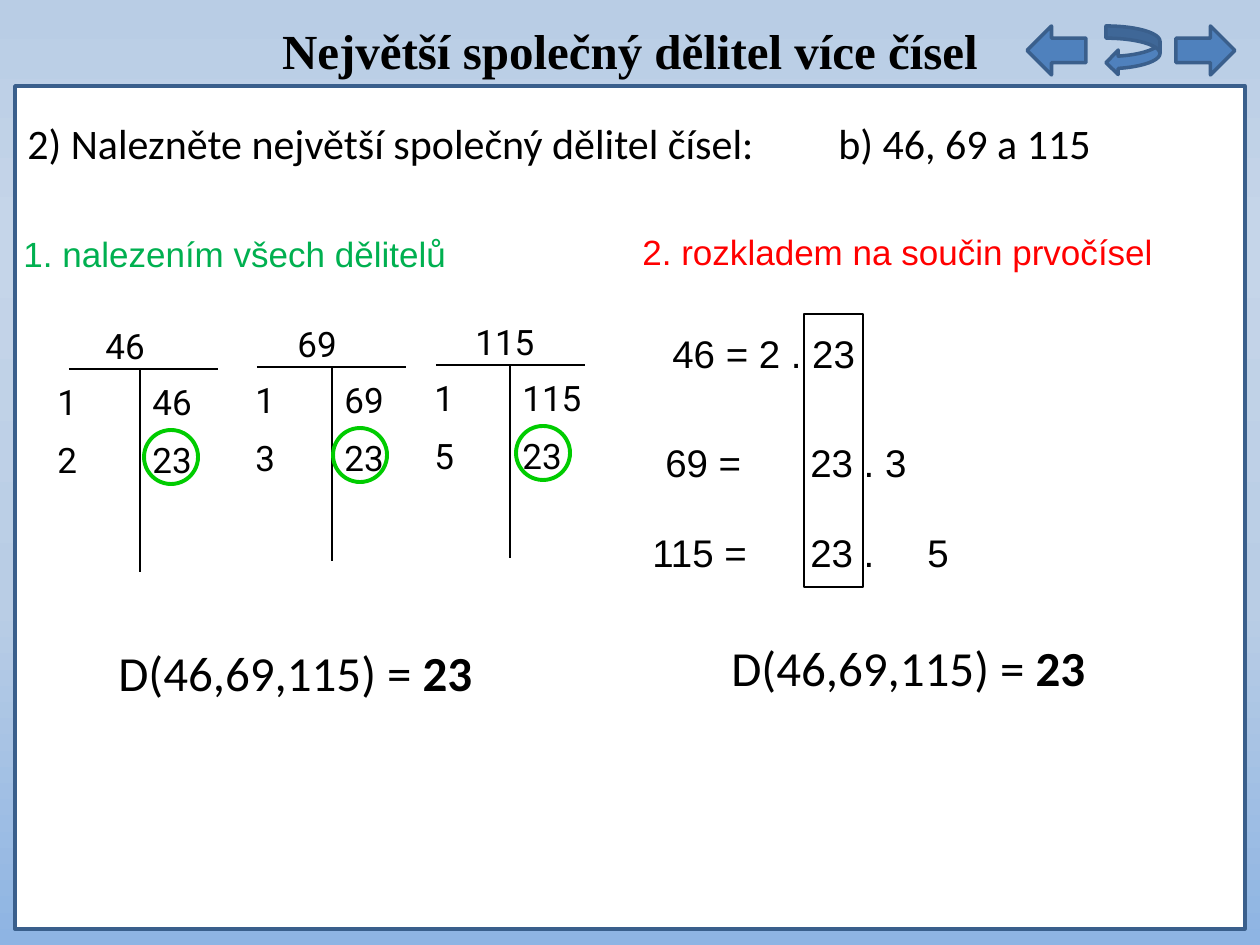
from lxml import etree
from pptx import Presentation
from pptx.dml.color import RGBColor
from pptx.enum.shapes import MSO_CONNECTOR, MSO_SHAPE
from pptx.enum.text import MSO_ANCHOR, PP_ALIGN
from pptx.oxml.ns import qn
from pptx.util import Pt

PX = 914400 // 126
RECT, OVAL = MSO_SHAPE.RECTANGLE, MSO_SHAPE.OVAL
LEFT, RIGHT = MSO_SHAPE.LEFT_ARROW, MSO_SHAPE.RIGHT_ARROW
BACK = MSO_SHAPE.CURVED_LEFT_ARROW
STRAIGHT = MSO_CONNECTOR.STRAIGHT
CENTER, MIDDLE = PP_ALIGN.CENTER, MSO_ANCHOR.MIDDLE
C = {"black": "000000", "white": "FFFFFF", "blue": "4F81BD", "edge": "3A5F8C",
     "green": "00B050", "ring": "00CC00", "red": "FF0000"}
SKY = [(0, "B9CDE5"), (25, "C5D5E9"), (64, "B9CDE5"), (100, "8EB4E3")]

prs = Presentation()
prs.slide_width, prs.slide_height = 1260 * PX, 945 * PX
s = prs.slides.add_slide(prs.slide_layouts[6])


def add_text(x, y, w, h, text, size, font, color="black", bold_tail="", tabs=()):
    tf = s.shapes.add_textbox(x * PX, y * PX, w * PX, h * PX).text_frame
    tf.word_wrap = True
    p = tf.paragraphs[0]
    p.font.size, p.font.name = Pt(size), font
    p.font.color.rgb = RGBColor.from_string(C[color])
    p.add_run().text = text
    if bold_tail:
        r = p.add_run()
        r.text, r.font.bold = bold_tail, True
    if tabs:
        tab_list = etree.Element(qn("a:tabLst"))
        for pos in tabs:
            etree.SubElement(tab_list, qn("a:tab"), pos=str(pos * PX), algn="l")
        p._p.get_or_add_pPr().insert(0, tab_list)
    return tf


def add_shape(kind, x, y, w, h, line, width, fill=None):
    sp = s.shapes.add_shape(kind, x * PX, y * PX, w * PX, h * PX)
    sp.shadow.inherit = False
    if fill:
        sp.fill.solid()
        sp.fill.fore_color.rgb = RGBColor.from_string(C[fill])
    else:
        sp.fill.background()
    sp.line.color.rgb = RGBColor.from_string(C[line])
    sp.line.width = Pt(width)


# Background gradient
bg = s.background.fill
bg.gradient()
bg.gradient_angle = 270
stops = s.background._cSld.find(".//" + qn("a:gsLst"))
for old in list(stops):
    stops.remove(old)
for pos, color in SKY:
    gs = etree.SubElement(stops, qn("a:gs"), pos=str(pos * 1000))
    etree.SubElement(gs, qn("a:srgbClr"), val=color)

# Frame, title and navigation arrows
add_shape(RECT, 15, 86, 1230, 843, "edge", 2, "white")
tf = add_text(15, 14, 1230, 72, "Největší společný dělitel více čísel", 28, "Times New Roman")
tf.paragraphs[0].alignment = CENTER
tf.paragraphs[0].font.bold = True
for kind, x, w in [(LEFT, 1027, 59), (BACK, 1106, 54), (RIGHT, 1176, 59)]:
    add_shape(kind, x, 26, w, 49, "edge", 2, "blue")

# Task and the two methods
add_text(15, 111, 1230, 64, "2) Nalezněte největší společný dělitel čísel:\tb) 46, 69 a 115",
         24, "Calibri", tabs=[811])
add_text(11, 226, 627, 55, "1. nalezením všech dělitelů", 20, "Arial", "green")
add_text(630, 224, 602, 55, "2. rozkladem na součin prvočísel", 20, "Arial", "red")

# Divisor tables: number, divisor pairs, stem x, bar y, bar left, left column, stem end, ring x
tables = [
    ("46", [("1", "46"), ("2", "23")], 140, 369, 69, 45, 572, 144),
    ("69", [("1", "69"), ("3", "23")], 332, 367, 257, 243, 561, 333),
    ("115", [("1", "115"), ("5", "23")], 510, 365, 436, 422, 558, 516),
]
for number, pairs, x, y, bar, left, end, ring in tables:
    add_text(x - 47, y - 51, 89, 55, number, 20, "Roboto")
    for i, pair in enumerate(pairs):
        for col, value in zip((left, x), pair):
            add_text(col, y + 5 + 58 * i, 89, 55, value, 20, "Roboto")
    for x1, y1, x2, y2 in [(bar, y, bar + 149, y), (x, y, x, end)]:
        ln = s.shapes.add_connector(STRAIGHT, x1 * PX, y1 * PX, x2 * PX, y2 * PX)
        ln.line.color.rgb = RGBColor.from_string(C["black"])
        ln.line.width = Pt(0.75)
        etree.SubElement(ln._element.spPr, qn("a:effectLst"))
    add_shape(OVAL, ring, y + 61, 54, 54, "ring", 2.25)

# Prime factorisations with the common factor boxed
for x, y, w, text, tabs in [(660, 324, 573, "46 = 2 . 23", []),
                            (653, 433, 573, "69 =\t23 . 3", [145]),
                            (640, 523, 358, "115 =\t23 .\t5", [158, 275])]:
    add_text(x, y, w, 59, text, 22, "Arial", tabs=tabs)
add_shape(RECT, 804, 314, 59, 273, "black", 0.75)

# Results
for x, y, w, h in [(106, 607, 455, 129), (719, 617, 476, 100)]:
    tf = add_text(x, y, w, h, "D(46,69,115) = ", 28, "Calibri", bold_tail="23")
    tf.vertical_anchor = MIDDLE

prs.save("out.pptx")
